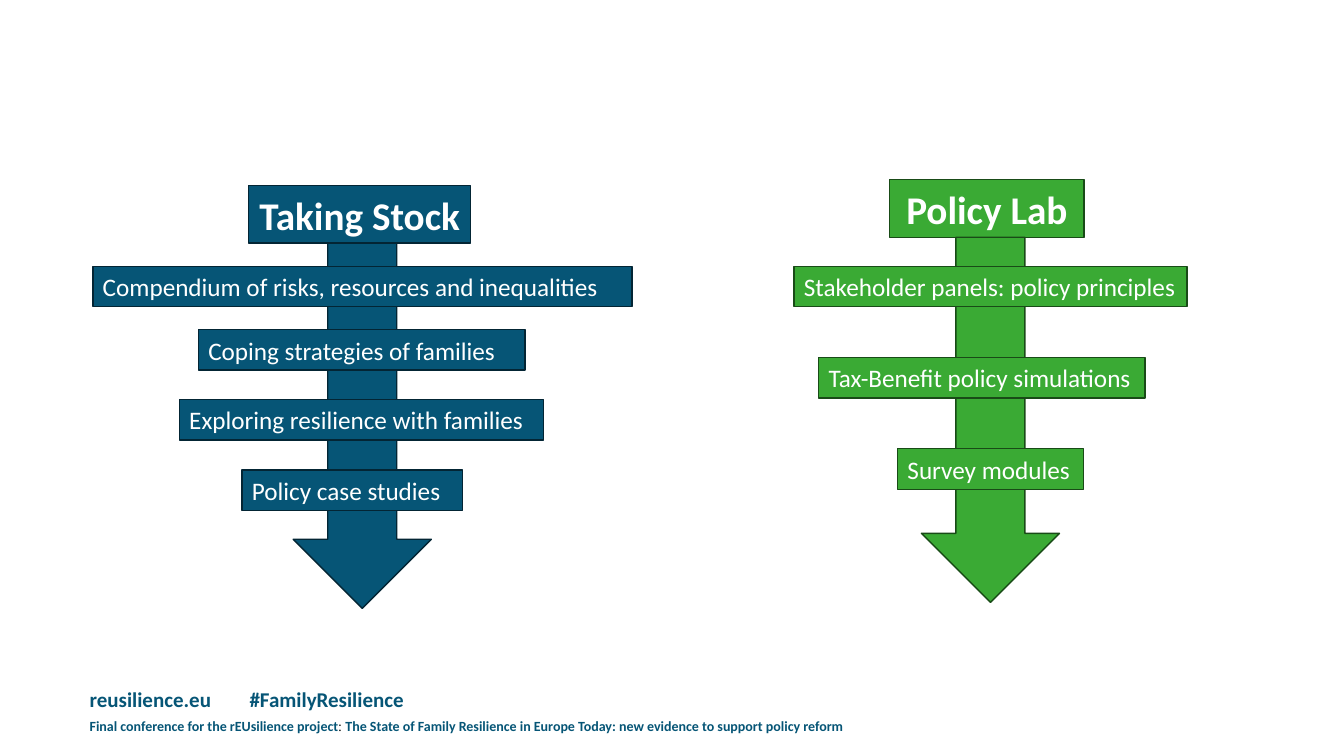
"""Build the slide with the Taking Stock and Policy Lab arrows."""
from pptx import Presentation
from pptx.dml.color import RGBColor
from pptx.enum.shapes import MSO_SHAPE
from pptx.enum.text import MSO_ANCHOR, PP_ALIGN
from pptx.oxml import parse_xml
from pptx.oxml.ns import nsdecls
from pptx.util import Cm, Pt

RECTANGLE = MSO_SHAPE.RECTANGLE
DOWN_ARROW = MSO_SHAPE.DOWN_ARROW
MIDDLE = MSO_ANCHOR.MIDDLE
LEFT, CENTER = PP_ALIGN.LEFT, PP_ALIGN.CENTER

BLUE = RGBColor(0x06, 0x55, 0x76)
DARK_BLUE = RGBColor(0x03, 0x25, 0x34)
GREEN = RGBColor(0x3A, 0xAA, 0x34)
DARK_GREEN = RGBColor(0x19, 0x4B, 0x17)
WHITE = RGBColor(0xFF, 0xFF, 0xFF)
BLACK = RGBColor(0x00, 0x00, 0x00)

FONT = "Calibri"
SEPARATOR_FONT = "Times New Roman"
LABEL_HEIGHT = 1.02
HEADING_HEIGHT = 1.45
ARROW_WIDTH, ARROW_HEIGHT = 3.48, 9.2

STRANDS = [
    {
        "colors": (BLUE, DARK_BLUE),
        "heading": ("Taking Stock", 6.27, 4.68, 5.59),
        "arrow_left": 7.39,
        "labels": [
            ("Compendium of risks, resources and inequalities", 2.34, 6.71, 13.59),
            ("Coping strategies of families", 5.0, 8.31, 8.23),
            ("Exploring resilience with families", 4.52, 10.07, 9.18),
            ("Policy case studies", 6.1, 11.84, 5.56),
        ],
    },
    {
        "colors": (GREEN, DARK_GREEN),
        "heading": ("Policy Lab", 22.42, 4.53, 4.9),
        "arrow_left": 23.22,
        "labels": [
            ("Stakeholder panels: policy principles", 20.01, 6.71, 9.91),
            ("Tax-Benefit policy simulations", 20.63, 9.01, 8.23),
            ("Survey modules", 22.62, 11.31, 4.68),
        ],
    },
]


class SlideBuilder:
    """Hold the style and the current slide."""

    def __init__(self, page):
        """Keep the page to draw on."""
        self.page = page

    def style(self, span, size, color, bold=False, name=FONT):
        """Format one run of text."""
        span.font.name = name
        span.font.size = Pt(size)
        span.font.bold = bold
        span.font.color.rgb = color

    def shape(self, kind, colors, left, top, width, height):
        """Add a filled and outlined preset shape."""
        shape = self.page.shapes.add_shape(
            kind, Cm(left), Cm(top), Cm(width), Cm(height))
        shape.shadow.inherit = False
        shape.fill.solid()
        shape.fill.fore_color.rgb, shape.line.color.rgb = colors
        shape.line.width = Pt(1)
        return shape

    def label(self, colors, text, left, top, width, height=LABEL_HEIGHT,
              size=18, bold=False, align=LEFT):
        """Add a rectangle with one line of white text."""
        box = self.shape(RECTANGLE, colors, left, top, width, height)
        frame = box.text_frame
        frame.word_wrap = False
        frame.vertical_anchor = MIDDLE
        frame.text = text
        para = frame.paragraphs[0]
        para.alignment = align
        self.style(para.runs[0], size, WHITE, bold)

    def strand(self, colors, heading, arrow_left, labels):
        """Add a heading, the arrow below it and the labels across it."""
        self.label(colors, *heading, height=HEADING_HEIGHT, size=28,
                   bold=True, align=CENTER)
        arrow_top = heading[2] + HEADING_HEIGHT
        self.shape(DOWN_ARROW, colors, arrow_left, arrow_top,
                   ARROW_WIDTH, ARROW_HEIGHT)
        for label in labels:
            self.label(colors, *label)

    def footer(self, pieces, top, width, height, size, tab=None):
        """Add a footer line from pieces of text with colour, weight and font."""
        box = self.page.shapes.add_textbox(
            Cm(2.01), Cm(top), Cm(width), Cm(height))
        box.text_frame.word_wrap = True
        para = box.text_frame.paragraphs[0]
        if tab:
            para._p.get_or_add_pPr().append(parse_xml(
                f'<a:tabLst {nsdecls("a")}><a:tab pos="{Cm(tab)}" algn="l"/></a:tabLst>'))
        for text, color, bold, name in pieces:
            span = para.add_run()
            span.text = text
            self.style(span, size, color, bold, name)


def main():
    """Create the deck and save it."""
    deck = Presentation()
    deck.slide_width, deck.slide_height = Cm(33.87), Cm(19.05)
    builder = SlideBuilder(deck.slides.add_slide(deck.slide_layouts[6]))
    builder.footer([("reusilience.eu\t#FamilyResilience", BLUE, True, FONT)],
                   17.17, 10.67, 1.57, 15, tab=4.03)
    builder.footer([
        ("Final conference for the rEUsilience project", BLUE, True, FONT),
        (": ", BLACK, False, SEPARATOR_FONT),
        ("The State of Family Resilience in Europe Today: "
         "new evidence to support policy reform", BLUE, True, FONT),
    ], 17.96, 20.07, 0.69, 10)
    for strand in STRANDS:
        builder.strand(**strand)
    deck.save("out.pptx")


if __name__ == "__main__":
    main()
